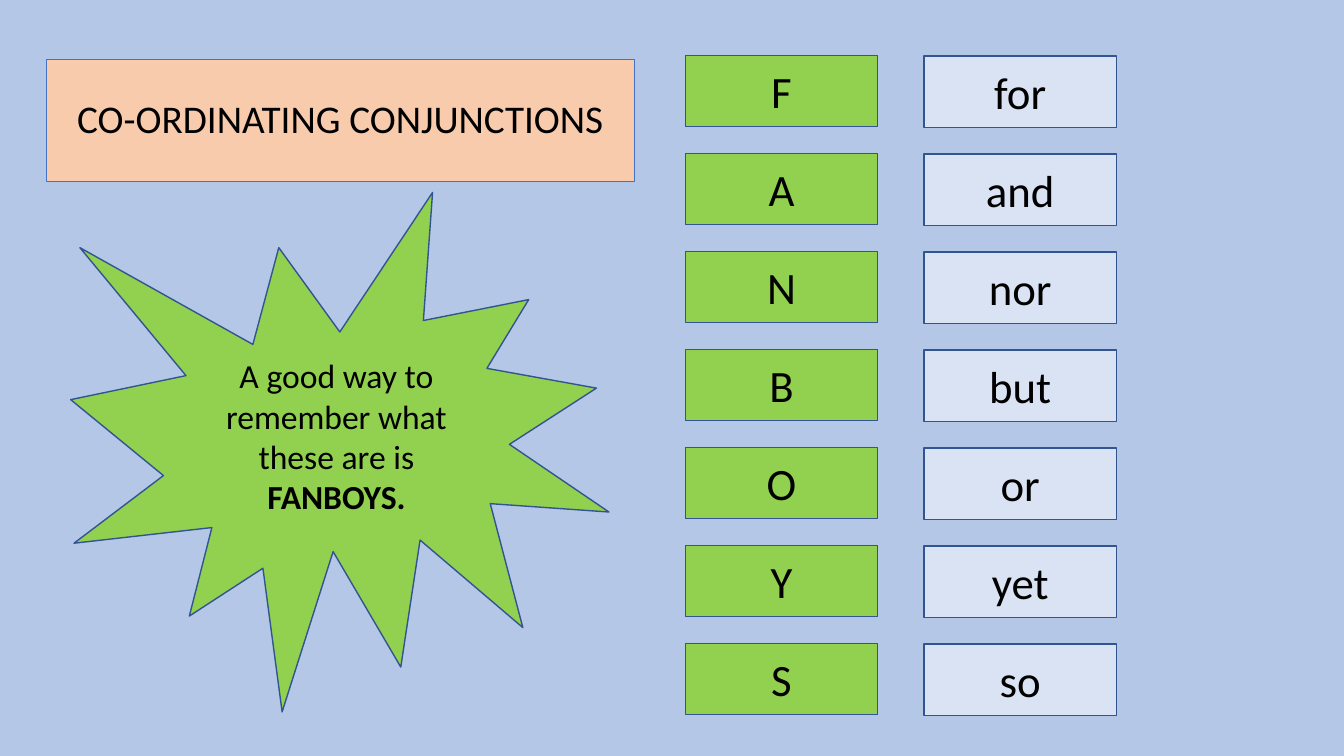
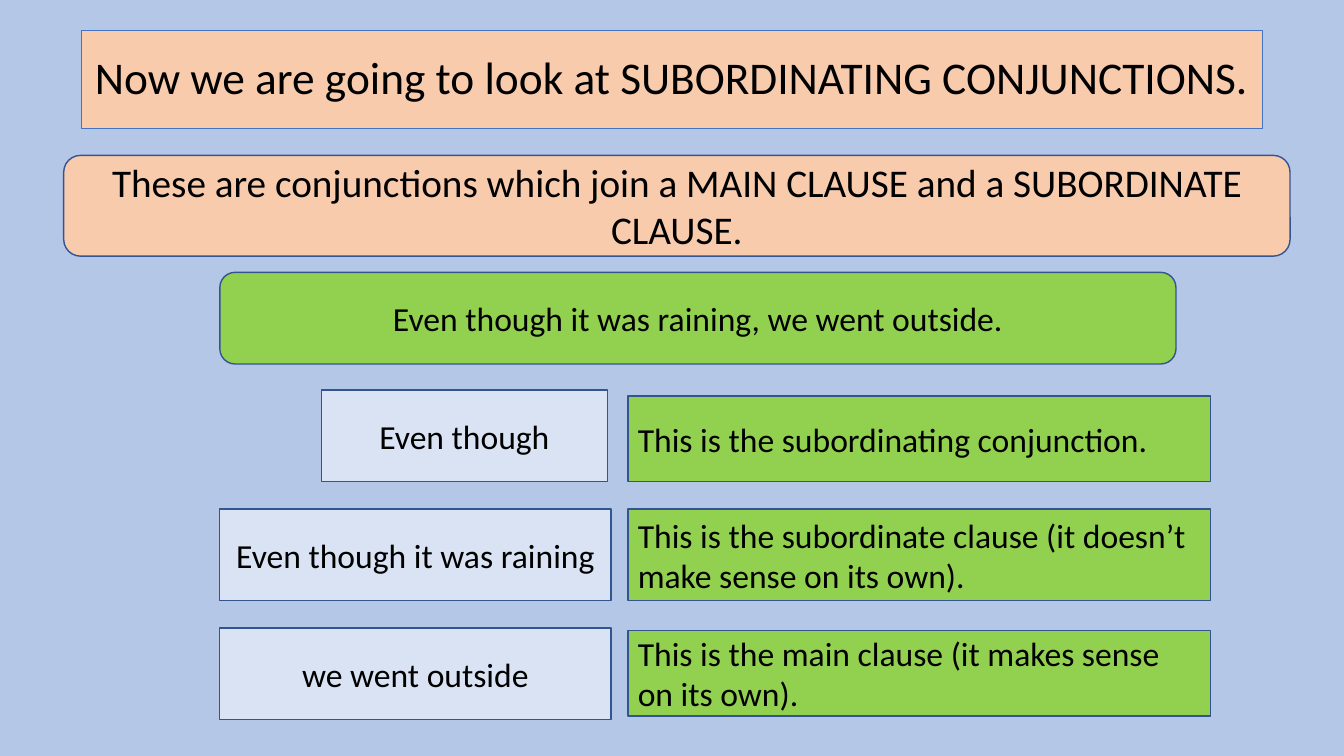
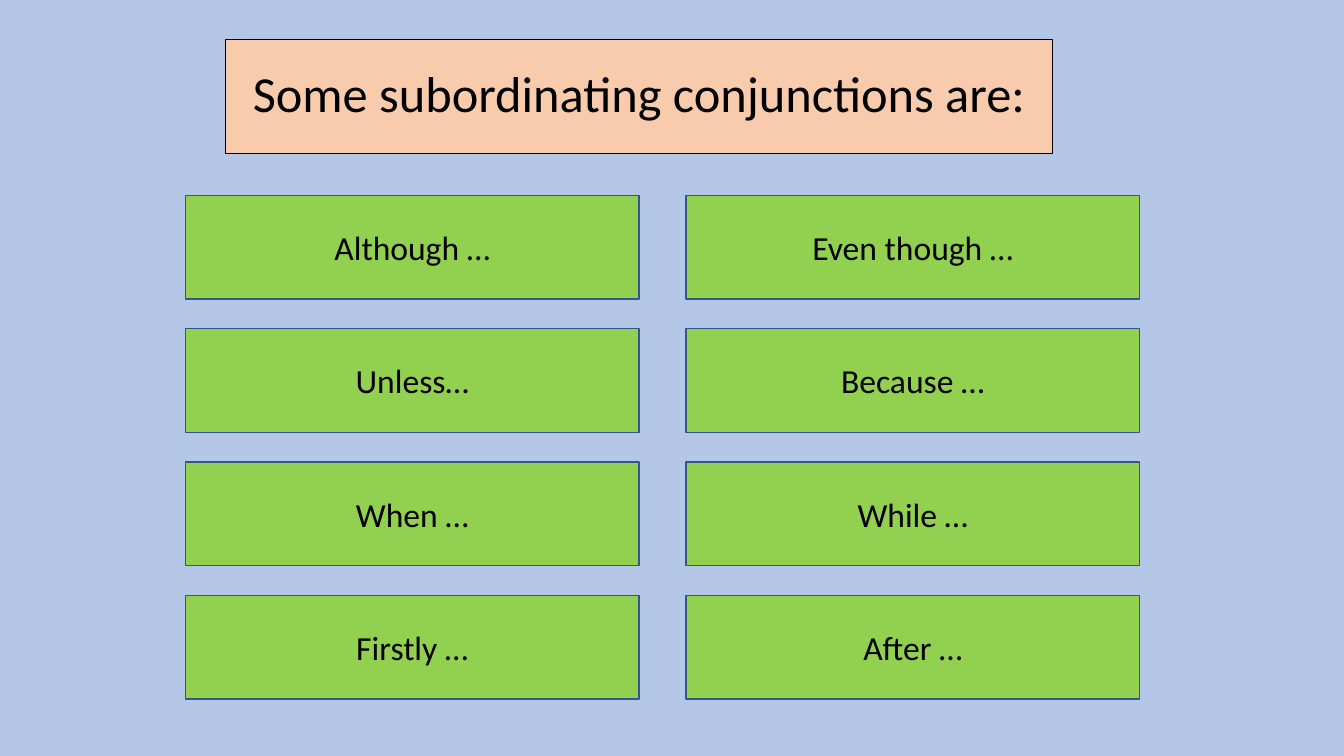
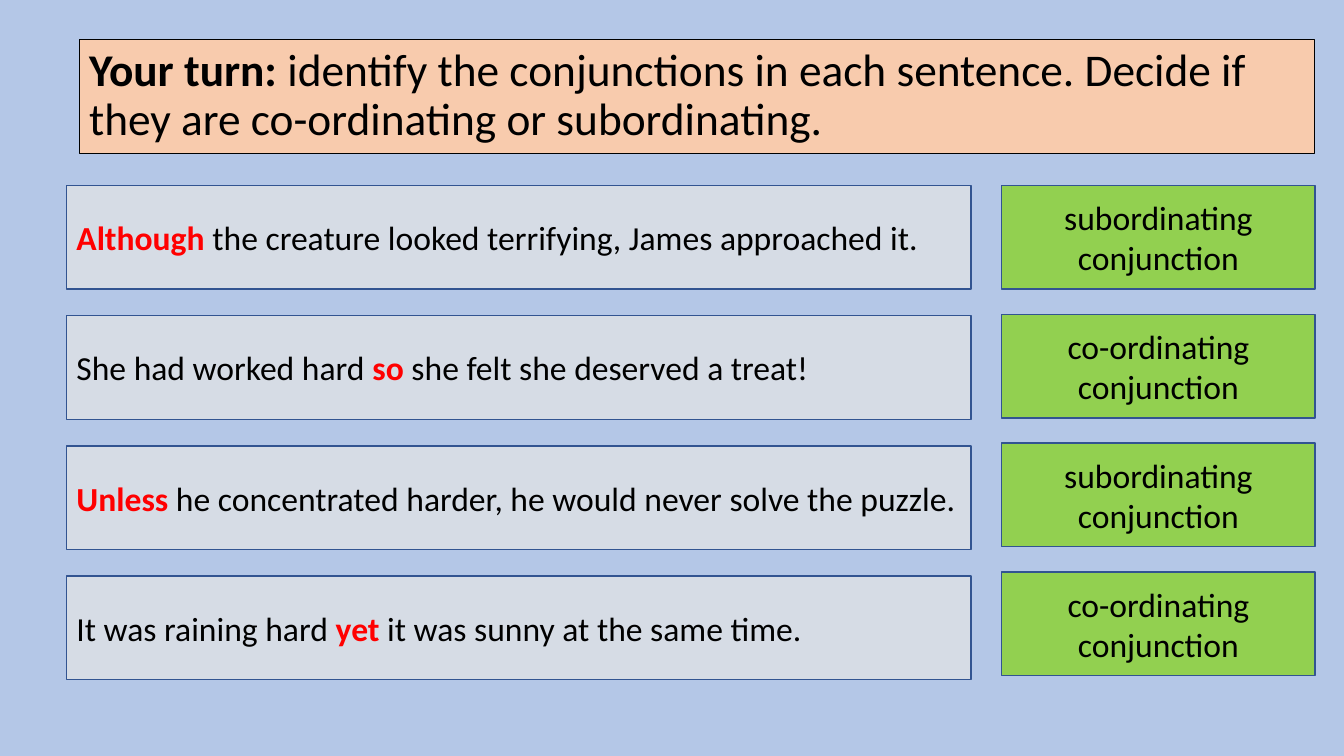
from pptx import Presentation
from pptx.dml.color import RGBColor
from pptx.enum.shapes import MSO_SHAPE as SHAPE
from pptx.enum.text import MSO_ANCHOR, MSO_AUTO_SIZE, PP_ALIGN
from pptx.util import Pt

SKY = RGBColor(0xB4, 0xC7, 0xE7)
PEACH = RGBColor(0xF8, 0xCB, 0xAD)
GREEN = RGBColor(0x92, 0xD0, 0x50)
PALE = RGBColor(0xDA, 0xE3, 0xF3)
GREY = RGBColor(0xD6, 0xDC, 0xE5)
NAVY = RGBColor(0x32, 0x54, 0x91)
BLUE = RGBColor(0x44, 0x72, 0xC4)
RED = RGBColor(0xFF, 0x00, 0x00)
BLACK = RGBColor(0x00, 0x00, 0x00)
FONT = "Calibri"
LEFT, CENTER = PP_ALIGN.LEFT, PP_ALIGN.CENTER


def paint(sp, fill, line, width):
    """Give a shape its fill and outline."""
    sp.fill.solid()
    sp.fill.fore_color.rgb = fill
    sp.line.color.rgb = line
    sp.line.width = Pt(width)


def write(tf, parts, size, align, accent=BLACK, spacing=None):
    """Write one paragraph per line; every second part is bold in the accent colour."""
    tf.word_wrap = True
    tf.auto_size = MSO_AUTO_SIZE.NONE
    tf.vertical_anchor = MSO_ANCHOR.MIDDLE
    lines = [[part] for part in parts.split("\n")] if isinstance(parts, str) else [parts]
    for i, line in enumerate(lines):
        p = tf.add_paragraph() if i else tf.paragraphs[0]
        p.alignment = align
        p.line_spacing = spacing
        p.font.name, p.font.size = FONT, Pt(size)
        for j, text in enumerate(line):
            if text:
                r = p.add_run()
                r.text = text
                r.font.bold = j % 2 == 1
                r.font.color.rgb = accent if j % 2 else BLACK


def panel(s, box, parts, fill=GREEN, size=24, align=CENTER, kind=SHAPE.RECTANGLE, accent=BLACK):
    """Add an outlined panel with text at box (left, top, width, height)."""
    sp = s.shapes.add_shape(kind, *map(Pt, box))
    sp.shadow.inherit = False
    paint(sp, fill, NAVY, 1)
    write(sp.text_frame, parts, size, align, accent)


def column(s, box, pitch, items, **style):
    """Stack equal panels downwards from the first box."""
    left, top, width, height = box
    for i, parts in enumerate(items):
        panel(s, (left, top + i * pitch, width, height), parts, **style)


def titled_slide(prs, box, parts, size, line=BLACK, align=CENTER):
    """Add a slide whose title placeholder is a peach band at box."""
    s = prs.slides.add_slide(prs.slide_layouts[5])
    title = s.shapes.title
    title.left, title.top, title.width, title.height = map(Pt, box)
    paint(title, PEACH, line, 0.75)
    write(title.text_frame, parts, size, align, spacing=0.9)
    return s


def clause_row(s, box, indent, label, note, note_inset):
    """Add a clause label and, beside it, the note that explains it."""
    left, top, width, height = box
    label_width = 204.5 if indent else 279.5
    panel(s, (left + indent, top, label_width, height), label, PALE)
    drop, note_height = note_inset
    note_width = 416
    panel(s, (left + width - note_width, top + drop, note_width, note_height), note, align=LEFT)


def coordinating_slide(prs):
    """Show the FANBOYS letters, their words and the mnemonic."""
    s = titled_slide(prs, (33, 42.5, 420, 87), "CO-ORDINATING CONJUNCTIONS", 28, BLUE)
    column(s, (489.5, 39.5, 137.5, 51), 70, "FANBOYS", size=32)
    words = ["for", "and", "nor", "but", "or", "yet", "so"]
    column(s, (660, 40, 137.5, 51), 70, words, fill=PALE, size=32)
    panel(s, (50.5, 137.5, 384.5, 371), ("A good way to remember what these are is ", "FANBOYS."),
          kind=SHAPE.EXPLOSION1)


def subordinating_slide(prs):
    """Explain the parts of a sentence with a subordinate clause."""
    s = titled_slide(prs, (58, 21.5, 843.5, 70.5),
                     "Now we are going to look at SUBORDINATING CONJUNCTIONS.", 32.4, BLUE)
    panel(s, (45.5, 111, 876, 72),
          "These are conjunctions which join a MAIN CLAUSE and a SUBORDINATE CLAUSE.",
          PEACH, 28, kind=SHAPE.ROUNDED_RECTANGLE)
    panel(s, (157, 194.5, 683, 65.5), "Even though it was raining, we went outside.",
          kind=SHAPE.ROUNDED_RECTANGLE)
    rows = [
        (72.5, "Even though", "This is the subordinating conjunction.", (4.5, 61)),
        (0, "Even though it was raining",
         "This is the subordinate clause (it doesn’t make sense on its own).", (0, 65.5)),
        (0, "we went outside", "This is the main clause (it makes sense on its own).", (2, 61)),
    ]
    for i, row in enumerate(rows):
        clause_row(s, (157, 278.5 + 85 * i, 707.5, 65.5), *row)


def examples_slide(prs):
    """List subordinating conjunctions in two columns."""
    s = titled_slide(prs, (161, 28, 591, 81.5), "Some subordinating conjunctions are:", 36)
    columns = [
        ["Although …", "Unless…", "When …", "Firstly …"],
        ["Even though …", "Because …", "While …", "After …"],
    ]
    for i, items in enumerate(columns):
        column(s, (132.5 + 357.5 * i, 139.5, 324, 74), 95.25, items)


def practice_slide(prs):
    """Pair practice sentences with the type of their conjunction."""
    s = titled_slide(prs, (56.5, 28, 882.5, 81.5),
                     ("", "Your turn:", " identify the conjunctions in each sentence. "
                      "Decide if they are co-ordinating or subordinating."), 32.4, align=LEFT)
    sentences = [
        ("", "Although ", "the creature looked terrifying, James approached it."),
        ("She had worked hard ", "so", " she felt she deserved a treat!"),
        ("", "Unless", " he concentrated harder, he would never solve the puzzle."),
        ("It was raining hard ", "yet", " it was sunny at the same time."),
    ]
    column(s, (47.5, 132.5, 646, 74), 93, sentences, fill=GREY, align=LEFT, accent=RED)
    answers = ["subordinating\nconjunction", "co-ordinating\nconjunction"] * 2
    column(s, (715.5, 132.5, 224, 74), 92, answers)


def main():
    """Build and save the presentation."""
    prs = Presentation()
    prs.slide_width, prs.slide_height = Pt(960), Pt(540)
    background = prs.slide_master.background.fill
    background.solid()
    background.fore_color.rgb = SKY
    for build in (coordinating_slide, subordinating_slide, examples_slide, practice_slide):
        build(prs)
    prs.save("out.pptx")


if __name__ == "__main__":
    main()
